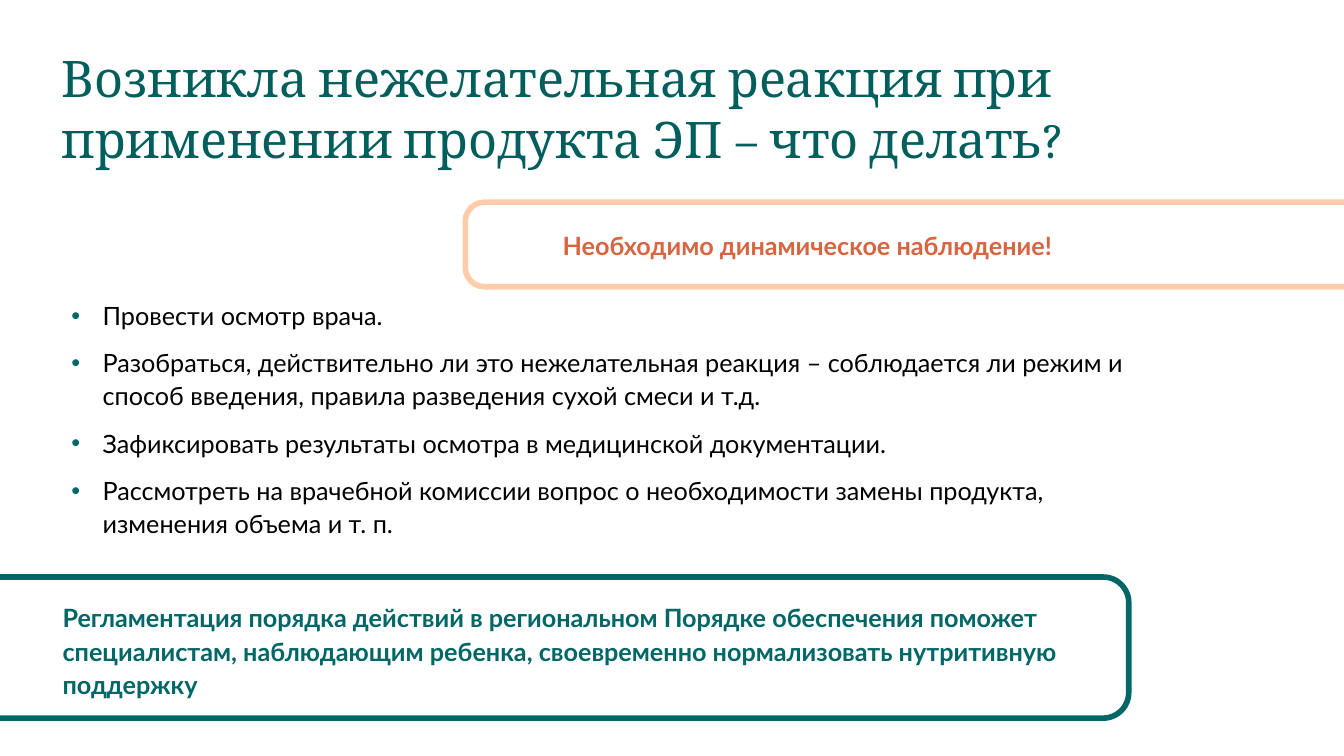
import pptx
import pptx.util
import pptx.dml.color
import pptx.enum.shapes
import pptx.enum.text
from lxml import etree
from pptx.util import Inches, Pt

# Content
TITLE = "Возникла нежелательная реакция при применении продукта ЭП – что делать?"
CALLOUT = "Необходимо динамическое наблюдение!"
ACTIONS = [
    "Провести осмотр врача.",
    "Разобраться, действительно ли это нежелательная реакция – соблюдается ли режим и "
    "способ введения, правила разведения сухой смеси и т.д.",
    "Зафиксировать результаты осмотра в медицинской документации.",
    "Рассмотреть на врачебной комиссии вопрос о необходимости замены продукта, "
    "изменения объема и т. п.",
]
SUMMARY = ("Регламентация порядка действий в региональном Порядке обеспечения поможет "
           "специалистам, наблюдающим ребенка, своевременно нормализовать нутритивную поддержку")

# Frames: left, top, width, height, rotation, corner, line colour
FRAMES = [
    (4.64, 0.57, 1.4, 11.71, 90, 0.181, "006766"),
    (8.72, -2.1, 0.84, 9.05, 270, 0.227, "FFCCA9"),
]

SHAPES = pptx.enum.shapes.MSO_SHAPE
ANCHOR = pptx.enum.text.MSO_ANCHOR
ALIGN = pptx.enum.text.PP_ALIGN
DEFAULT_INSETS = (0.1, 0.05, 0.1, 0.05)


def color(value):
    return pptx.dml.color.RGBColor.from_string(value)


def add_bullet(paragraph, symbol, bullet_color, indent):
    properties = paragraph._p.get_or_add_pPr()
    properties.set("marL", str(Inches(indent)))
    properties.set("indent", str(-Inches(indent)))
    holder = etree.SubElement(properties, pptx.oxml.ns.qn("a:buClr"))
    etree.SubElement(holder, pptx.oxml.ns.qn("a:srgbClr"), val=bullet_color)
    etree.SubElement(properties, pptx.oxml.ns.qn("a:buFont"), typeface="Arial")
    etree.SubElement(properties, pptx.oxml.ns.qn("a:buChar"), char=symbol)


def write_text(shape, lines, size, font_name, font_color, bold=False, spacing=None,
               space_after=0, bullets=False, insets=DEFAULT_INSETS, anchor=ANCHOR.TOP):
    frame = shape.text_frame
    frame.word_wrap = True
    frame.vertical_anchor = anchor
    (frame.margin_left, frame.margin_top,
     frame.margin_right, frame.margin_bottom) = [Inches(inset) for inset in insets]
    for index, line in enumerate(lines):
        paragraph = frame.add_paragraph() if index else frame.paragraphs[0]
        paragraph.text = line
        paragraph.alignment = ALIGN.LEFT
        if spacing:
            paragraph.line_spacing = spacing
        paragraph.space_after = Pt(space_after)
        if bullets:
            add_bullet(paragraph, "•", "006766", 0.31)
        paragraph.font.size = Pt(size)
        paragraph.font.name = font_name
        paragraph.font.bold = bold
        paragraph.font.color.rgb = color(font_color)


def add_text(slide, box, lines, *style, **options):
    shape = slide.shapes.add_textbox(*[Inches(length) for length in box])
    write_text(shape, lines, *style, **options)


def add_frame(slide, left, top, width, height, rotation, corner, line_color):
    shape = slide.shapes.add_shape(SHAPES.ROUND_2_SAME_RECTANGLE, Inches(left), Inches(top),
                                   Inches(width), Inches(height))
    shape.shadow.inherit = False
    shape.rotation = rotation
    shape.adjustments[0] = corner
    shape.adjustments[1] = 0
    shape.fill.background()
    shape.line.color.rgb = color(line_color)
    shape.line.width = Pt(4)


def main():
    presentation = pptx.Presentation()
    presentation.slide_width = Inches(13.33)
    presentation.slide_height = Inches(7.5)
    slide = presentation.slides.add_slide(presentation.slide_layouts[6])

    # Frames running off the slide edges
    for frame in FRAMES:
        add_frame(slide, *frame)

    # Title
    add_text(slide, (0.61, 0.42, 10.19, 1.31), [TITLE], 36, "Cambria", "005E5C",
             insets=(0, 0.05, 0.1, 0.05))

    # Callout in the upper frame
    callout = slide.shapes.add_shape(SHAPES.ROUNDED_RECTANGLE, Inches(5.43), Inches(1.88),
                                     Inches(5.98), Inches(1.08))
    callout.shadow.inherit = False
    callout.fill.background()
    callout.line.fill.background()
    write_text(callout, [CALLOUT], 18, "Lato", "D86541", bold=True, spacing=Pt(24),
               anchor=ANCHOR.MIDDLE)

    # Actions and summary
    add_text(slide, (0.61, 2.9, 10.66, 2.96), ACTIONS, 18, "Lato", "000000",
             spacing=1.1, space_after=10, bullets=True)
    add_text(slide, (0.62, 5.95, 10.32, 1.22), [SUMMARY], 18, "Lato", "006766",
             bold=True, spacing=1.1, insets=(0, 0, 0.1, 0.05))

    presentation.save("out.pptx")


if __name__ == "__main__":
    main()
